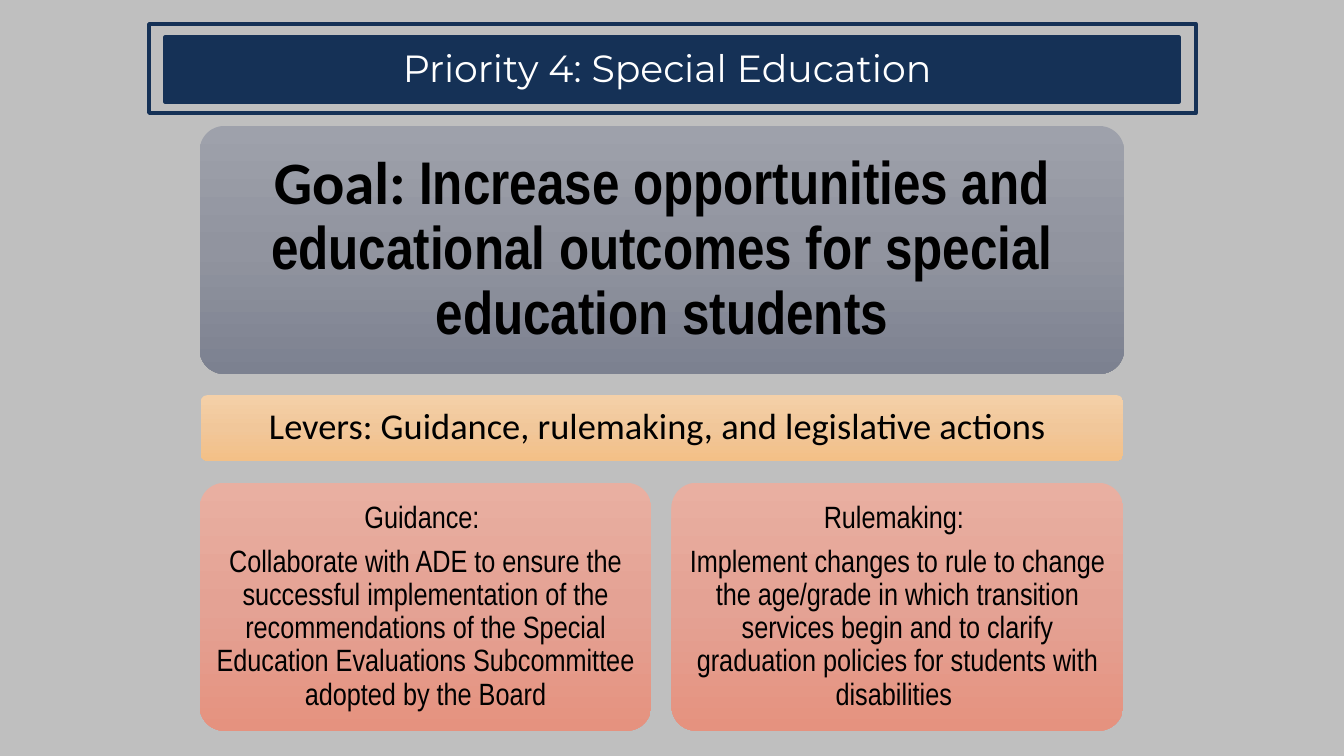
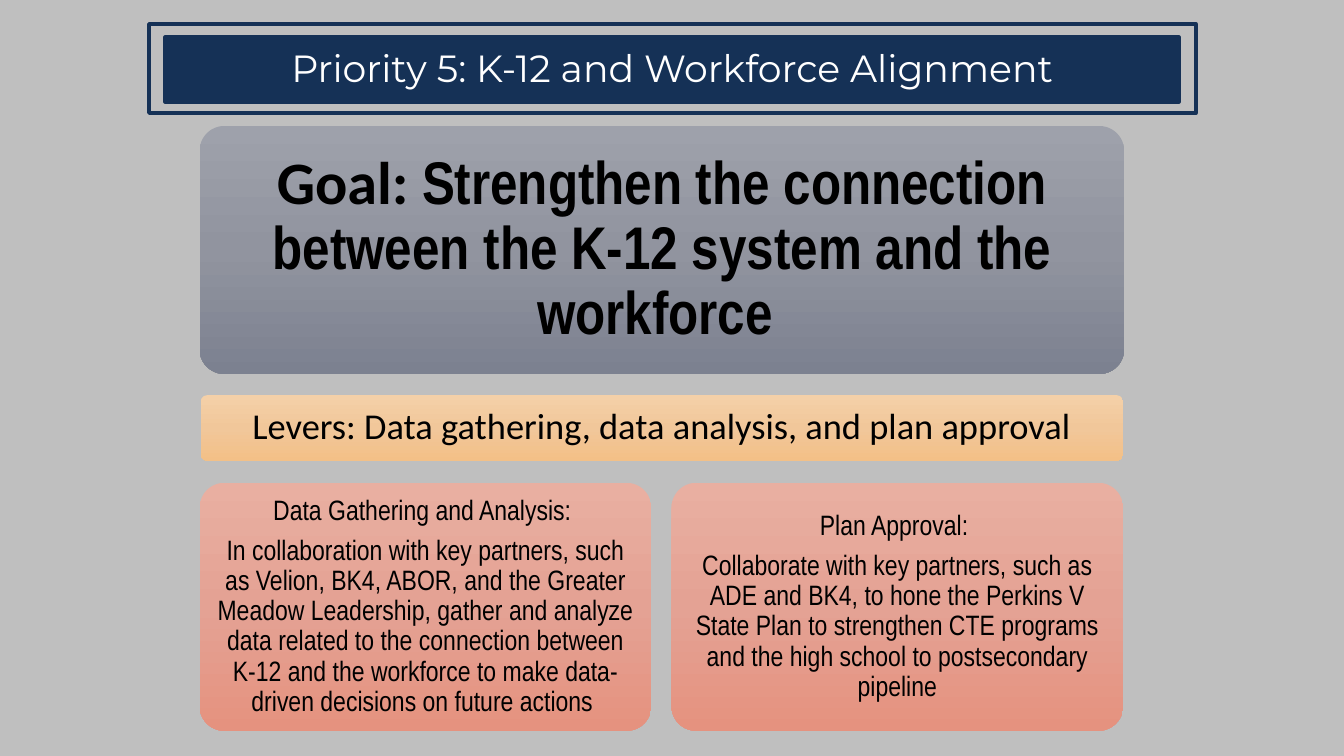
from dataclasses import dataclass

from pptx import Presentation, util as u
from pptx.dml.color import RGBColor
from pptx.enum import shapes, text
from pptx.oxml import parse_xml
from pptx.oxml.ns import nsdecls, qn

SCALE = 9144  # EMU per px, at 100 px to the inch


@dataclass(frozen=True)
class Theme:
    backdrop: str = "BFBFBF"
    navy: str = "153156"
    white: str = "FFFFFF"
    black: str = "000000"
    slate: tuple = ("9EA1AB", "91949F", "7C8190")
    amber: tuple = ("F4D0A8", "F1C79A", "F3C087")
    coral: tuple = ("E9AFA1", "E4A294", "E5927F")
    title_font: str = "Montserrat"
    lead_font: str = "Calibri"
    body_font: str = "Arial Narrow"
    title_size: int = 27
    goal_size: int = 43
    lever_size: int = 26


THEME = Theme()

# Layout in px
SLIDE_WIDTH, SLIDE_HEIGHT = 1333, 750
BAND = (164, 37, 1005, 64)
FRAME = (148, 24, 1038, 88)
GOAL = (198, 125, 917, 246)
LEVERS = (199, 392, 915, 65)
TILE_LEFT, TILE_TOP, TILE_WIDTH, TILE_HEIGHT, TILE_GAP = 198, 479, 448, 246, 20

PRIORITIES = [
    {
        "title": "Priority 4: Special Education ",
        "goal": "Increase opportunities and educational outcomes for special education students",
        "levers": "Levers: Guidance, rulemaking, and legislative actions ",
        "tile_size": 22,
        "tiles": [
            ("Guidance: ",
             "Collaborate with ADE to ensure the successful implementation of the "
             "recommendations of the Special Education Evaluations Subcommittee "
             "adopted by the Board"),
            ("Rulemaking: ",
             "Implement changes to rule to change the age/grade in which transition "
             "services begin and to clarify graduation policies for students with "
             "disabilities "),
        ],
    },
    {
        "title": "Priority 5: K-12 and Workforce Alignment",
        "goal": "Strengthen the connection between the K-12 system and the workforce ",
        "levers": "Levers: Data gathering, data analysis, and plan approval",
        "tile_size": 20,
        "tiles": [
            ("Data Gathering and Analysis: ",
             "In collaboration with key partners, such as Velion, BK4, ABOR, and the "
             "Greater Meadow Leadership, gather and analyze data related to the "
             "connection between K-12 and the workforce to make data-driven decisions "
             "on future actions "),
            ("Plan Approval: ",
             "Collaborate with key partners, such as ADE and BK4, to hone the Perkins V "
             "State Plan to strengthen CTE programs and the high school to "
             "postsecondary pipeline"),
        ],
    },
]


def px(length):
    return u.Emu(round(length * SCALE))


def rgb(color):
    return RGBColor.from_string(color)


def add_box(page, area, kind=shapes.MSO_SHAPE.RECTANGLE, fill=None, line=None):
    """Add a shape; a tuple of colours as fill makes a top-to-bottom gradient."""
    box = page.shapes.add_shape(kind, *map(px, area))
    box.shadow.inherit = False
    if line:
        box.line.color.rgb = rgb(line)
        box.line.width = u.Pt(3)
    else:
        box.line.fill.background()
    if isinstance(fill, tuple):
        fill_gradient(box, fill)
    elif fill:
        box.fill.solid()
        box.fill.fore_color.rgb = rgb(fill)
    else:
        box.fill.background()
    return box


def fill_gradient(box, colors):
    step = 100000 // (len(colors) - 1)
    stops = "".join(
        f'<a:gs pos="{index * step}"><a:srgbClr val="{color}"/></a:gs>'
        for index, color in enumerate(colors))
    gradient = parse_xml(
        f'<a:gradFill {nsdecls("a")} rotWithShape="1"><a:gsLst>{stops}</a:gsLst>'
        '<a:lin ang="5400000" scaled="0"/></a:gradFill>')
    box.element.spPr.find(qn("a:prstGeom")).addnext(gradient)


def write(box, paragraphs, size, color=THEME.black, bold=False,
          insets=(10, 5, 10, 5), line_spacing=None, space_after=None):
    """Write paragraphs, each a list of (text, font) spans, centred in a box."""
    frame = box.text_frame
    frame.word_wrap = True
    frame.vertical_anchor = text.MSO_ANCHOR.MIDDLE
    (frame.margin_left, frame.margin_top,
     frame.margin_right, frame.margin_bottom) = map(px, insets)
    for index, spans in enumerate(paragraphs):
        para = frame.add_paragraph() if index else frame.paragraphs[0]
        para.alignment = text.PP_ALIGN.CENTER
        para.line_spacing = line_spacing
        para.space_after = space_after
        for words, font in spans:
            span = para.add_run()
            span.text = words
            span.font.name = font
            span.font.size = u.Pt(size)
            span.font.bold = bold
            span.font.color.rgb = rgb(color)


def add_card(page, area, colors, paragraphs, size, bold=False):
    """Add a rounded card whose insets and spacing follow its type size."""
    card = add_box(page, area, shapes.MSO_SHAPE.ROUNDED_RECTANGLE, colors)
    card.adjustments[0] = 0.1
    write(card, paragraphs, size, bold=bold, insets=[round(size * 0.42)] * 4,
          line_spacing=0.9, space_after=u.Pt(size * 0.35))


def add_title(page, title):
    band = add_box(page, BAND, fill=THEME.navy, line=THEME.navy)
    write(band, [[(title, THEME.title_font)]], THEME.title_size, THEME.white,
          insets=(10, 5, 10, 9))
    add_box(page, FRAME, line=THEME.navy)


def add_priority(deck, priority):
    page = deck.slides.add_slide(deck.slide_layouts[6])
    page.background.fill.solid()
    page.background.fill.fore_color.rgb = rgb(THEME.backdrop)
    add_title(page, priority["title"])

    # Goal and levers
    goal = [("Goal: ", THEME.lead_font), (priority["goal"], THEME.body_font)]
    add_card(page, GOAL, THEME.slate, [goal], THEME.goal_size, bold=True)
    add_card(page, LEVERS, THEME.amber,
             [[(priority["levers"], THEME.lead_font)]], THEME.lever_size)

    # Action tiles
    for column, tile in enumerate(priority["tiles"]):
        left = TILE_LEFT + column * (TILE_WIDTH + TILE_GAP)
        add_card(page, (left, TILE_TOP, TILE_WIDTH, TILE_HEIGHT), THEME.coral,
                 [[(words, THEME.body_font)] for words in tile],
                 priority["tile_size"])


def main():
    deck = Presentation()
    deck.slide_width, deck.slide_height = px(SLIDE_WIDTH), px(SLIDE_HEIGHT)
    for priority in PRIORITIES:
        add_priority(deck, priority)
    deck.save("out.pptx")


if __name__ == "__main__":
    main()
